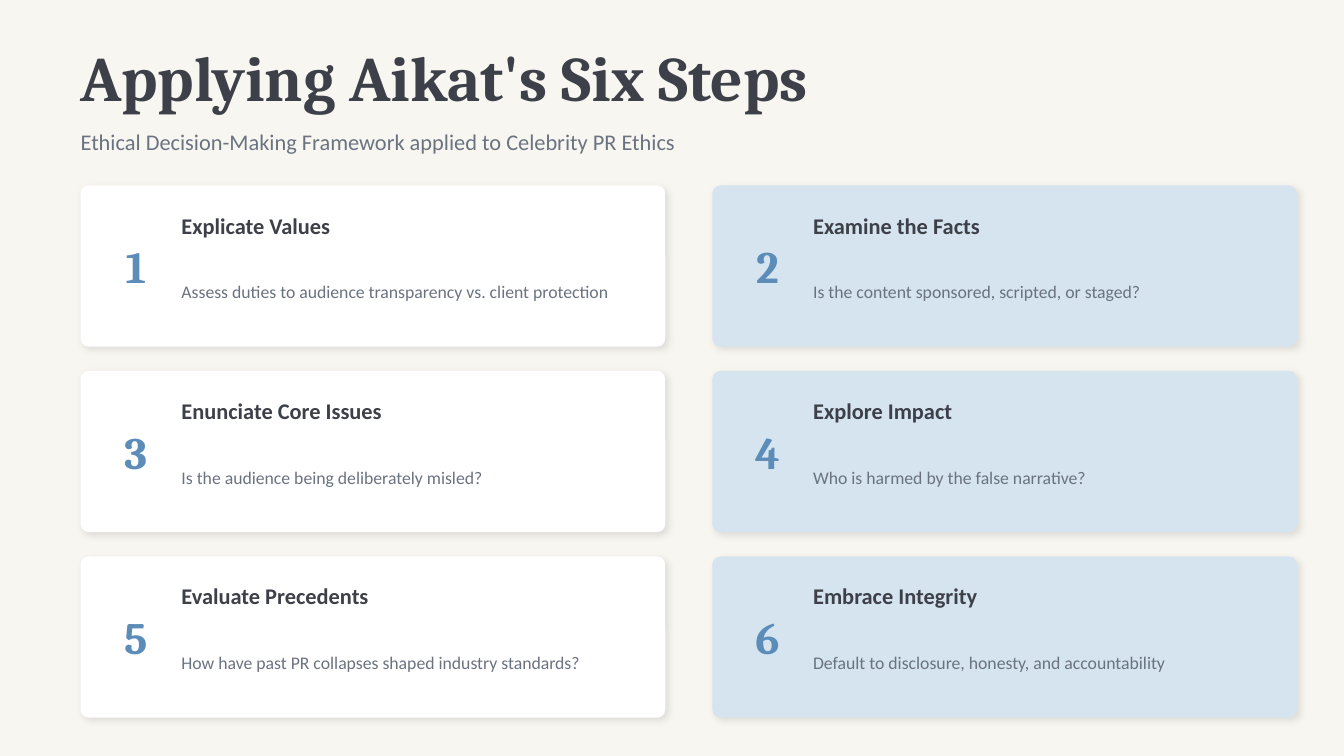
from dataclasses import dataclass

from lxml.etree import SubElement
from pptx import Presentation
from pptx.dml.color import RGBColor as RGB
from pptx.enum.shapes import MSO_SHAPE as SHAPE
from pptx.enum.text import MSO_ANCHOR as ANCHOR, MSO_AUTO_SIZE as AUTO, PP_ALIGN as ALIGN
from pptx.oxml.ns import qn
from pptx.util import Pt


@dataclass(frozen=True)
class Theme:
    background: str = "F8F6F1"
    cards: tuple = ("FFFFFF", "D6E4F0")
    shadow: str = "000000"
    title: tuple = ("Cambria", 34, "3D4048", True)
    subtitle: tuple = ("Calibri", 12, "6B7280", False)
    number: tuple = ("Cambria", 24, "5B8DB8", True)
    heading: tuple = ("Calibri", 12, "3D4048", True)
    question: tuple = ("Calibri", 9.5, "6B7280", False)


class Deck:
    """Draws styled elements on the current slide."""

    def __init__(self, slide, theme):
        self.slide, self.theme = slide, theme
        fill = slide.background.fill
        fill.solid()
        fill.fore_color.rgb = RGB.from_string(theme.background)

    def set_text(self, sp, text, style, align=ALIGN.LEFT):
        name, size, color, bold = style
        tf = sp.text_frame
        frame = dict(word_wrap=True, auto_size=AUTO.NONE, vertical_anchor=ANCHOR.MIDDLE,
                     margin_left=0, margin_top=0, margin_right=0, margin_bottom=0)
        for key, value in frame.items():
            setattr(tf, key, value)
        p = tf.paragraphs[0]
        p.alignment, p.space_before = align, Pt(0)
        r = p.add_run()
        r.text = text
        for key, value in dict(name=name, size=Pt(size), bold=bold).items():
            setattr(r.font, key, value)
        r.font.color.rgb = RGB.from_string(color)

    def placeholder(self, index, box, text, style):
        sp = self.slide.placeholders[index]
        for key, value in zip(("left", "top", "width", "height"), box):
            setattr(sp, key, Pt(value))
        self.set_text(sp, text, style)

    def text(self, box, text, style, align=ALIGN.LEFT):
        self.set_text(self.slide.shapes.add_textbox(*map(Pt, box)), text, style, align)

    def panel(self, box, color):
        sp = self.slide.shapes.add_shape(SHAPE.ROUNDED_RECTANGLE, *map(Pt, box))
        sp.adjustments[0] = 0.05
        sp.fill.solid()
        sp.fill.fore_color.rgb = RGB.from_string(color)
        sp.line.fill.background()
        sp.shadow.inherit = False
        effects = sp.element.spPr.find(qn("a:effectLst"))
        shadow = SubElement(effects, qn("a:outerShdw"), blurRad=str(Pt(4)), dist=str(Pt(2)),
                            dir=str(45 * 60000), algn="bl", rotWithShape="0")
        tint = SubElement(shadow, qn("a:srgbClr"), val=self.theme.shadow)
        SubElement(tint, qn("a:alpha"), val="9000")

    def card(self, x, y, number, heading, question, color):
        self.panel((x, y, 313.2, 86.4), color)
        self.text((x + 10.8, y + 7.2, 37.44, 72), str(number), self.theme.number, ALIGN.CENTER)
        self.text((x + 54, y + 8.64, 248.4, 25.2), heading, self.theme.heading)
        self.text((x + 54, y + 36, 248.4, 41.76), question, self.theme.question)


STEPS = [
    ("Explicate Values", "Assess duties to audience transparency vs. client protection"),
    ("Examine the Facts", "Is the content sponsored, scripted, or staged?"),
    ("Enunciate Core Issues", "Is the audience being deliberately misled?"),
    ("Explore Impact", "Who is harmed by the false narrative?"),
    ("Evaluate Precedents", "How have past PR collapses shaped industry standards?"),
    ("Embrace Integrity", "Default to disclosure, honesty, and accountability"),
]


def main():
    prs = Presentation()
    prs.slide_width, prs.slide_height = Pt(720), Pt(405)
    theme = Theme()
    deck = Deck(prs.slides.add_slide(prs.slide_layouts[0]), theme)
    left, top, column_step, row_step = 43.2, 99.36, 338.4, 99.36
    deck.placeholder(0, (left, 20.16, 612, 41.76), "Applying Aikat's Six Steps", theme.title)
    deck.placeholder(1, (left, 64.8, 612, 21.6),
                     "Ethical Decision-Making Framework applied to Celebrity PR Ethics",
                     theme.subtitle)
    for i, (heading, question) in enumerate(STEPS):
        row, column = divmod(i, 2)
        deck.card(left + column * column_step, top + row * row_step,
                  i + 1, heading, question, theme.cards[column])
    prs.save("out.pptx")


if __name__ == "__main__":
    main()
